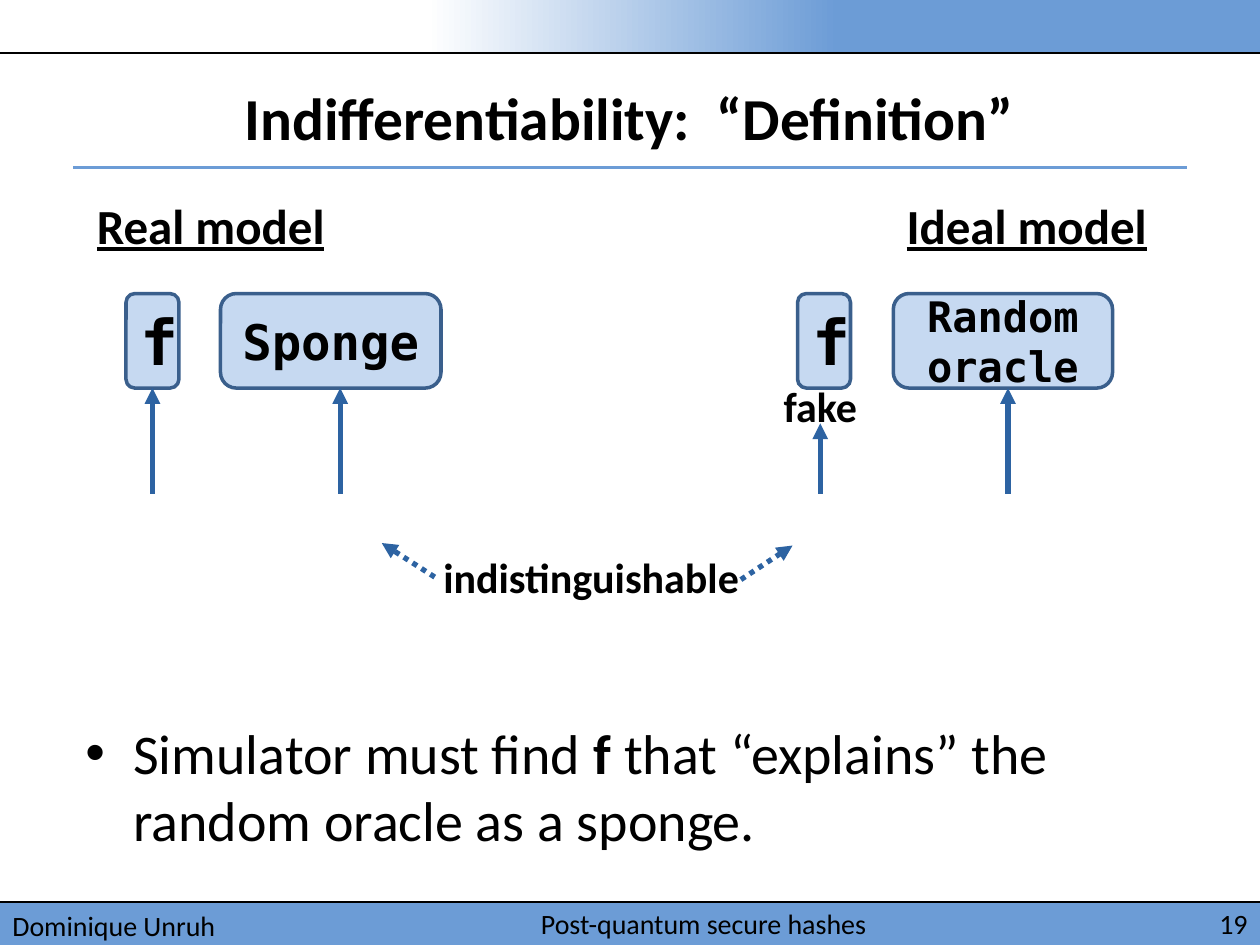
from dataclasses import dataclass

from lxml import etree
from pptx import Presentation
from pptx.dml.color import RGBColor
from pptx.enum import dml, shapes, text
from pptx.oxml import ns
from pptx.util import Inches, Pt

LEFT, CENTER, RIGHT = text.PP_ALIGN.LEFT, text.PP_ALIGN.CENTER, text.PP_ALIGN.RIGHT
TOP, MIDDLE = text.MSO_ANCHOR.TOP, text.MSO_ANCHOR.MIDDLE


@dataclass(frozen=True)
class Theme:
    ink: str = "000000"
    paper: str = "FFFFFF"
    band: str = "6C9CD6"
    box: str = "C6D9F1"
    box_edge: str = "3A5F8C"
    arrow: str = "2D63A2"
    font: str = "Calibri"
    mono: str = "DejaVu Sans Mono"
    title: int = 34
    symbol: int = 36
    body: int = 32
    heading: int = 28
    label: int = 24
    footer: int = 16


def rgb(value):
    return RGBColor.from_string(value)


def lengths(values):
    return [Inches(v) for v in values]


class SlideBuilder:
    def __init__(self, slide, theme):
        self.slide = slide
        self.theme = theme

    def style(self, p, size, bold=False, underline=False, font=None):
        for r in p.runs:
            r.font.size = Pt(size)
            r.font.name = font or self.theme.font
            r.font.bold = bold
            r.font.underline = underline
            r.font.color.rgb = rgb(self.theme.ink)

    def text(self, at, content, size, align=LEFT, anchor=TOP, wrap=True,
             bold=False, underline=False):
        tf = self.slide.shapes.add_textbox(*lengths(at)).text_frame
        tf.word_wrap = wrap
        tf.vertical_anchor = anchor
        if not wrap:
            tf.auto_size = text.MSO_AUTO_SIZE.SHAPE_TO_FIT_TEXT
        p = tf.paragraphs[0]
        p.text = content
        p.alignment = align
        self.style(p, size, bold, underline)

    def label(self, at, content, size, align=LEFT, underline=False):
        self.text(at, content, size, align, wrap=False, bold=True, underline=underline)

    def bullet(self, at, parts, indent):
        """Add one bulleted paragraph from (text, bold) parts."""
        tf = self.slide.shapes.add_textbox(*lengths(at)).text_frame
        tf.word_wrap = True
        p = tf.paragraphs[0]
        pPr = p._p.get_or_add_pPr()
        pPr.set("marL", str(Inches(indent)))
        pPr.set("indent", str(-Inches(indent)))
        etree.SubElement(pPr, ns.qn("a:buFont"), typeface="Arial")
        etree.SubElement(pPr, ns.qn("a:buChar"), char="•")
        for content, _ in parts:
            p.add_run().text = content
        self.style(p, self.theme.body)
        for r, (_, bold) in zip(p.runs, parts):
            r.font.bold = bold

    def band(self, at, fade=False):
        sp = self.slide.shapes.add_shape(shapes.MSO_SHAPE.RECTANGLE, *lengths(at))
        sp.shadow.inherit = False
        sp.line.fill.background()
        if not fade:
            sp.fill.solid()
            sp.fill.fore_color.rgb = rgb(self.theme.band)
            return
        sp.fill.gradient()
        sp.fill.gradient_angle = 0
        stops = ((0.09, self.theme.paper), (0.54, self.theme.band))
        for stop, (position, color) in zip(sp.fill.gradient_stops, stops):
            stop.position = position
            stop.color.rgb = rgb(color)

    def box(self, at, content, size):
        sp = self.slide.shapes.add_shape(
            shapes.MSO_SHAPE.ROUNDED_RECTANGLE, *lengths(at))
        sp.shadow.inherit = False
        sp.fill.solid()
        sp.fill.fore_color.rgb = rgb(self.theme.box)
        sp.line.color.rgb = rgb(self.theme.box_edge)
        sp.line.width = Pt(2)
        tf = sp.text_frame
        tf.text = content
        tf.word_wrap = True
        tf.vertical_anchor = MIDDLE
        p = tf.paragraphs[0]
        p.alignment = CENTER
        self.style(p, size, bold=True, font=self.theme.mono)
        return sp

    def line(self, start, end, color, width):
        cxn = self.slide.shapes.add_connector(
            shapes.MSO_CONNECTOR.STRAIGHT, *lengths(start + end))
        cxn.line.color.rgb = rgb(color)
        cxn.line.width = Pt(width)
        etree.SubElement(cxn._element.spPr, ns.qn("a:effectLst"))
        return cxn

    def arrow(self, start, end, dotted=False):
        cxn = self.line(start, end, self.theme.arrow, 3)
        if dotted:
            # ROUND_DOT is the member written as sysDot
            cxn.line.dash_style = dml.MSO_LINE.ROUND_DOT
        etree.SubElement(cxn.line._get_or_add_ln(), ns.qn("a:tailEnd"), type="triangle")
        return cxn


def add_frame(s, t):
    """Draw the header, footer and title with its rule."""
    foot, foot_h = 7.16, 0.34
    s.band((0, foot, 10, foot_h))
    s.band((2.73, 0, 7.27, 0.42), fade=True)
    for y in (0.42, foot):
        s.line((0, y), (10.02, y), t.ink, 0.75)
    s.line((0.58, 1.33), (9.42, 1.33), t.band, 2)
    s.text((0, foot, 2.73, foot_h), "Dominique Unruh", t.footer)
    s.text((2.42, foot, 6.33, foot_h), "Post-quantum secure hashes", t.footer,
           CENTER, MIDDLE)
    s.text((9.33, foot, 0.67, foot_h), "19", t.footer, RIGHT, MIDDLE)
    s.text((0.58, 0.5, 8.83, 0.85), "Indifferentiability:  “Definition”", t.title,
           CENTER, MIDDLE, bold=True)


def add_models(s, t):
    """Draw the real and ideal models with their query arrows."""
    box_y, box_h, query_y = 2.33, 0.75, 3.92
    box_bottom = box_y + box_h
    s.label((0.67, 1.5, 2.03, 0.57), "Real model", t.heading, underline=True)
    s.label((7.07, 1.5, 2.13, 0.57), "Ideal model", t.heading, RIGHT, underline=True)

    real_f, _ = [s.box((x, box_y, 0.42, box_h), "f", t.symbol) for x in (1, 6.33)]
    s.box((1.75, box_y, 1.75, box_h), "Sponge", t.heading)
    s.box((7.09, box_y, 1.74, box_h), "Random oracle", t.label)
    s.label((6.12, 2.97, 0.79, 0.5), "fake", t.label)

    s.arrow((1.21, query_y), (1.21, box_bottom)).end_connect(real_f, 2)
    for x, y in ((2.7, box_bottom), (6.51, 3.36), (8, box_bottom)):
        s.arrow((x, query_y), (x, y))

    s.label((3.42, 4.33, 2.58, 0.5), "indistinguishable", t.label)
    s.arrow((3.45, 4.58), (3.03, 4.31), dotted=True)
    s.arrow((5.88, 4.6), (6.29, 4.33), dotted=True)


def main():
    prs = Presentation()
    prs.slide_width, prs.slide_height = Inches(10), Inches(7.5)
    theme = Theme()
    s = SlideBuilder(prs.slides.add_slide(prs.slide_layouts[6]), theme)
    add_frame(s, theme)
    add_models(s, theme)
    s.bullet((0.58, 5.65, 9, 1.32),
             [("Simulator must find ", False), ("f", True),
              (" that “explains” the random oracle as a sponge.", False)],
             indent=0.38)
    prs.save("out.pptx")


if __name__ == "__main__":
    main()
